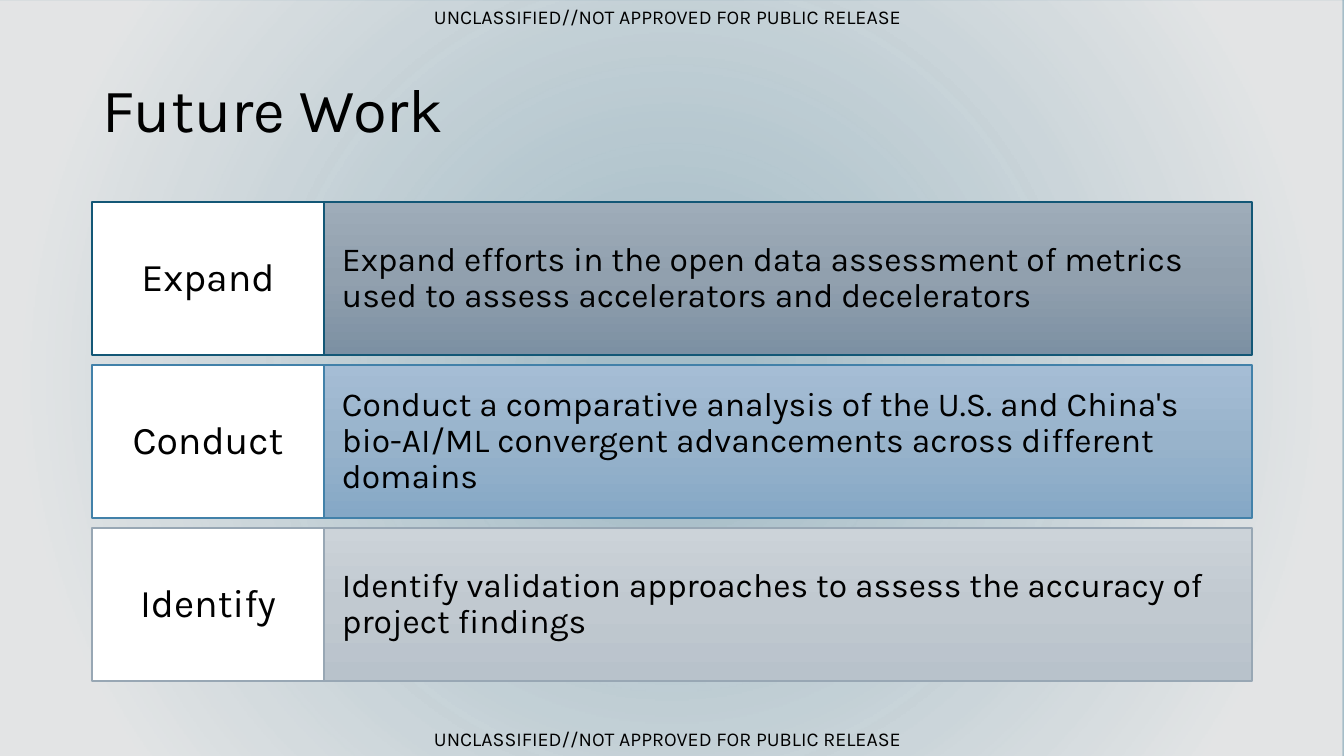
from lxml import etree
from pptx import Presentation
from pptx.dml.color import RGBColor
from pptx.enum.shapes import MSO_SHAPE
from pptx.enum.text import MSO_ANCHOR, PP_ALIGN
from pptx.oxml import parse_xml
from pptx.oxml.ns import nsdecls, qn
from pptx.util import Pt

PX = 12192000 // 1344 + 3 / 7
RECTANGLE = MSO_SHAPE.RECTANGLE
MIDDLE = MSO_ANCHOR.MIDDLE
TOP = MSO_ANCHOR.TOP
LEFT = PP_ALIGN.LEFT
CENTER = PP_ALIGN.CENTER

MARKING = "UNCLASSIFIED//NOT APPROVED FOR PUBLIC RELEASE"
TASKS = [
    ("Expand",
     "Expand efforts in the open data assessment of metrics used to assess accelerators and decelerators",
     "135776", ("9EACB9", "91A0AE", "7C90A3")),
    ("Conduct",
     "Conduct a comparative analysis of the U.S. and China's bio-AI/ML convergent advancements across different domains",
     "4281A9", ("A5BDD5", "98B3CB", "85A8C6")),
    ("Identify",
     "Identify validation approaches to assess the accuracy of project findings",
     "98A7B4", ("CCD3D9", "C1C9D0", "B8C2CB")),
]


def set_gradient(shape, stops, direction):
    gradient = parse_xml(f'<a:gradFill {nsdecls("a")} rotWithShape="1"><a:gsLst/>{direction}</a:gradFill>')
    for position, color, opacity in stops:
        stop = etree.SubElement(gradient[0], qn("a:gs"), pos=str(position * 1000))
        fill_color = etree.SubElement(stop, qn("a:srgbClr"), val=color)
        if opacity < 100:
            etree.SubElement(fill_color, qn("a:alpha"), val=str(opacity * 1000))
    shape.fill.background()
    properties = shape.element.spPr
    properties.replace(properties.find(qn("a:noFill")), gradient)


def set_text(shape, text, size, align, anchor, inset_x, inset_y, spacing, wrap=True):
    frame = shape.text_frame
    frame.word_wrap = wrap
    frame.vertical_anchor = anchor
    frame.margin_left = frame.margin_right = int(inset_x * PX)
    frame.margin_top = frame.margin_bottom = int(inset_y * PX)
    paragraph = frame.paragraphs[0]
    paragraph.text = text
    paragraph.alignment = align
    paragraph.line_spacing = spacing
    paragraph.font.name = "Karla"
    paragraph.font.size = Pt(size)
    paragraph.font.color.rgb = RGBColor.from_string("000000")


presentation = Presentation()
presentation.slide_width = round(1344 * PX)
presentation.slide_height = round(756 * PX)
slide = presentation.slides.add_slide(presentation.slide_layouts[6])
slide.background.fill.solid()
slide.background.fill.fore_color.rgb = RGBColor.from_string("156082")

backdrop = slide.shapes.add_shape(RECTANGLE, 0, 0, presentation.slide_width, presentation.slide_height)
backdrop.shadow.inherit = False
backdrop.line.fill.background()
set_gradient(
    backdrop, [(10, "E8E8E8", 68), (85, "E8E8E8", 97)],
    '<a:path path="circle"><a:fillToRect l="50000" t="50000" r="50000" b="50000"/></a:path>')

title = slide.shapes.add_textbox(*(int(value * PX) for value in (93, 40, 1159, 146)))
set_text(title, "Future Work", 44, LEFT, MIDDLE, 10, 5, 0.9)

for row, (label, description, line_color, colors) in enumerate(TASKS):
    top = 202 + row * 163
    bar, tile = [
        slide.shapes.add_shape(RECTANGLE, *(int(value * PX) for value in (left, top, width, 153)))
        for left, width in ((324, 928), (92, 232))
    ]
    for shape in (bar, tile):
        shape.shadow.inherit = False
        shape.line.color.rgb = RGBColor.from_string(line_color)
        shape.line.width = Pt(1)
    set_gradient(bar, zip((0, 50, 100), colors, (100, 100, 100)), '<a:lin ang="5400000" scaled="0"/>')
    tile.fill.solid()
    tile.fill.fore_color.rgb = RGBColor.from_string("FFFFFF")
    set_text(bar, description, 24, LEFT, MIDDLE, 18, 39, 0.9)
    set_text(tile, label, 28, CENTER, MIDDLE, 12, 15, 0.9)

for top in (722, 0):
    marking = slide.shapes.add_textbox(*(int(value * PX) for value in (424, top, 495, 34)))
    set_text(marking, MARKING, 14, LEFT, TOP, 10, 5, 1.0, wrap=False)

presentation.save("out.pptx")
